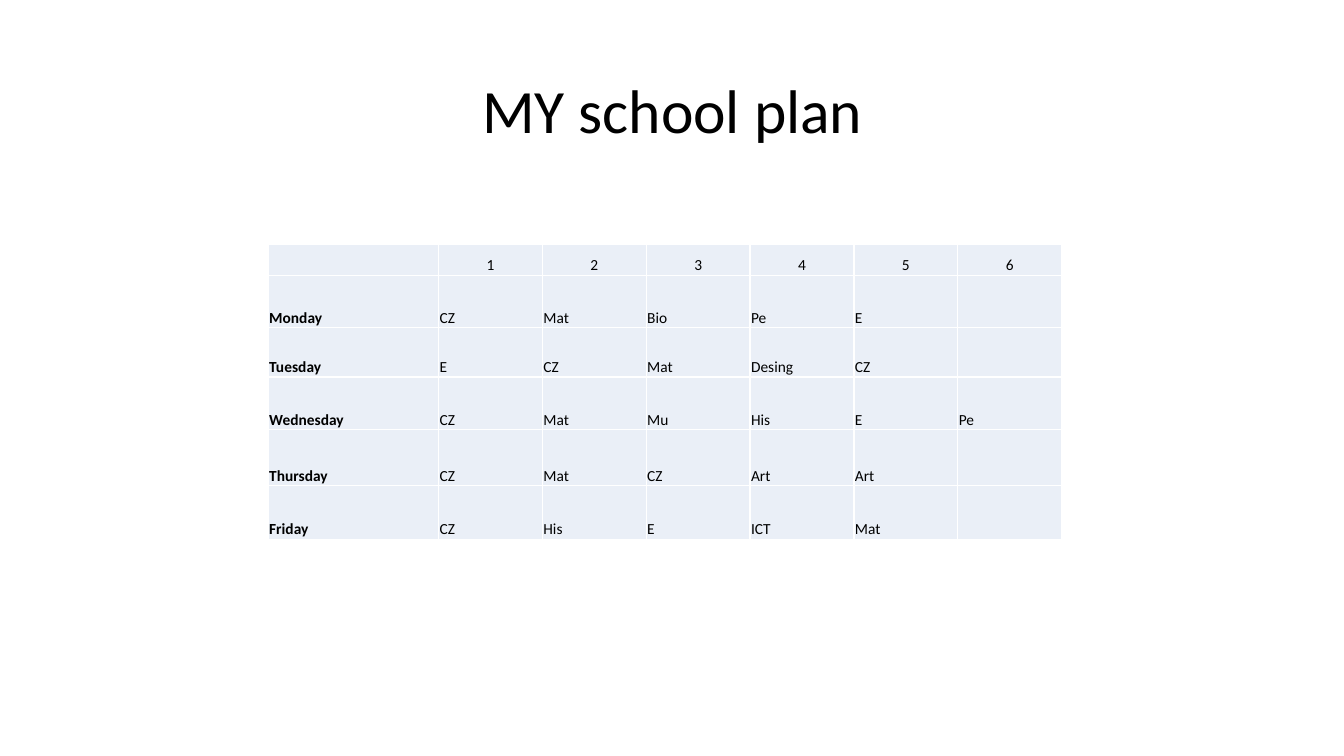
from dataclasses import dataclass

from lxml import etree
from pptx import Presentation
from pptx import util as u
from pptx.dml import color
from pptx.enum import text
from pptx.oxml import ns

FONT = "Calibri"
BLACK = "000000"
WHITE = "FFFFFF"
PALE_BLUE = "EAEFF7"
TITLE_ONLY = 5
LESSON_COUNT = 6
DAY_WIDTH = 1.69
LESSON_WIDTH = 1.03
HEADER_HEIGHT = 0.31
CELL_SIZE = 11


@dataclass
class SchoolDay:
    name: str
    lessons: list[str]
    height: float


WEEK = [
    SchoolDay("Monday", ["CZ", "Mat", "Bio", "Pe", "E"], 0.52),
    SchoolDay("Tuesday", ["E", "CZ", "Mat", "Desing", "CZ"], 0.49),
    SchoolDay("Wednesday", ["CZ", "Mat", "Mu", "His", "E", "Pe"], 0.52),
    SchoolDay("Thursday", ["CZ", "Mat", "CZ", "Art", "Art"], 0.56),
    SchoolDay("Friday", ["CZ", "His", "E", "ICT", "Mat"], 0.53),
]


def rgb(value: str) -> color.RGBColor:
    return color.RGBColor.from_string(value)


def add_span(para, content: str, size: float, bold: bool = False) -> None:
    span = para.add_run()
    span.text = content
    span.font.name = FONT
    span.font.size = u.Pt(size)
    span.font.bold = bold
    span.font.color.rgb = rgb(BLACK)


def add_borders(cell, value: str, width: float) -> None:
    properties = cell._tc.get_or_add_tcPr()
    for side in ("lnL", "lnR", "lnT", "lnB"):
        line = etree.SubElement(properties, ns.qn(f"a:{side}"), w=str(u.Pt(width)))
        fill = etree.SubElement(line, ns.qn("a:solidFill"))
        etree.SubElement(fill, ns.qn("a:srgbClr"), val=value)


def fill_cell(cell, content: str, centred: bool, bold: bool) -> None:
    add_borders(cell, WHITE, 1)
    cell.fill.solid()
    cell.fill.fore_color.rgb = rgb(PALE_BLUE)
    cell.vertical_anchor = text.MSO_ANCHOR.BOTTOM
    cell.margin_left = cell.margin_right = cell.margin_top = u.Inches(0.01)
    cell.margin_bottom = u.Inches(0)
    para = cell.text_frame.paragraphs[0]
    para.alignment = text.PP_ALIGN.CENTER if centred else text.PP_ALIGN.LEFT
    if content:
        add_span(para, content, CELL_SIZE, bold)
    else:
        etree.SubElement(para._p, ns.qn("a:endParaRPr"), sz=str(CELL_SIZE * 100))


def add_title(page, content: str) -> None:
    box = page.shapes.title
    box.left, box.top = u.Inches(0.92), u.Inches(0.4)
    box.width, box.height = u.Inches(11.5), u.Inches(1.45)
    box.text_frame.vertical_anchor = text.MSO_ANCHOR.MIDDLE
    para = box.text_frame.paragraphs[0]
    para.alignment = text.PP_ALIGN.CENTER
    para.line_spacing = 0.9
    add_span(para, content, 44)


def add_timetable(page, week: list[SchoolDay]) -> None:
    widths = [DAY_WIDTH] + [LESSON_WIDTH] * LESSON_COUNT
    heights = [HEADER_HEIGHT] + [day.height for day in week]
    rows = [["", *map(str, range(1, LESSON_COUNT + 1))]]
    for day in week:
        gaps = [""] * (LESSON_COUNT - len(day.lessons))
        rows.append([day.name, *day.lessons, *gaps])

    table = page.shapes.add_table(
        len(heights), len(widths), u.Inches(2.66), u.Inches(2.42),
        u.Inches(sum(widths)), u.Inches(sum(heights)),
    ).table
    table.horz_banding = False
    table.first_row = False
    for column, width in zip(table.columns, widths):
        column.width = u.Inches(width)
    for row, height in zip(table.rows, heights):
        row.height = u.Inches(height)
    for row_index, row in enumerate(rows):
        for column_index, content in enumerate(row):
            fill_cell(
                table.cell(row_index, column_index), content,
                centred=row_index == 0, bold=column_index == 0,
            )


def main() -> None:
    deck = Presentation()
    deck.slide_width, deck.slide_height = u.Inches(13.33), u.Inches(7.5)
    page = deck.slides.add_slide(deck.slide_layouts[TITLE_ONLY])
    add_title(page, "MY school plan")
    add_timetable(page, WEEK)
    deck.save("out.pptx")


if __name__ == "__main__":
    main()
